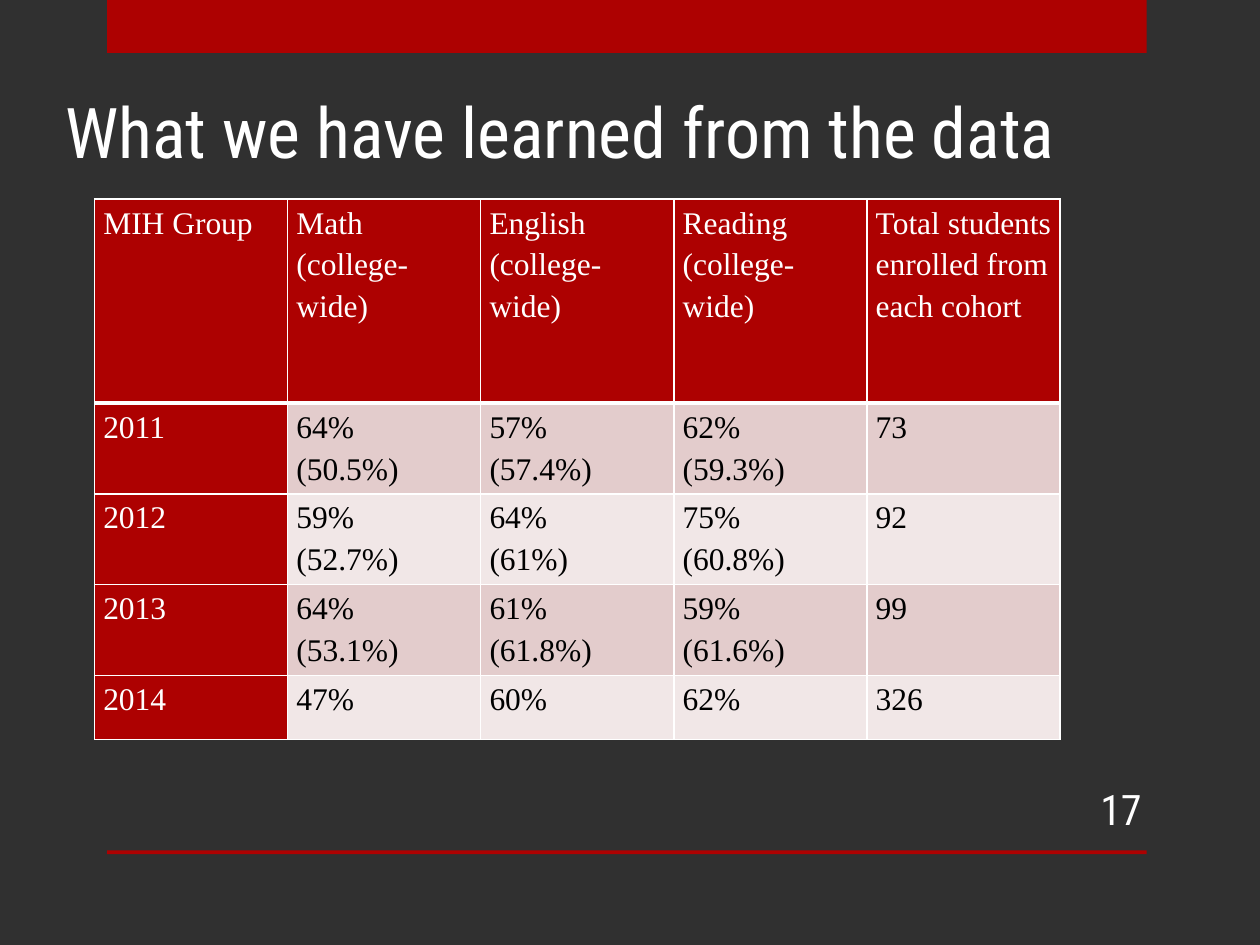
from dataclasses import dataclass

from lxml import etree
from pptx import Presentation
from pptx import util as u
from pptx.dml.color import RGBColor
from pptx.enum import shapes, text
from pptx.oxml.ns import qn


@dataclass(frozen=True)
class Theme:
    background: str = "303030"
    accent: str = "AD0101"
    light: str = "FFFFFF"
    dark: str = "000000"
    bands: tuple[str, str] = ("E3CCCC", "F1E7E7")
    heading_font: str = "Roboto Condensed"
    table_font: str = "Times New Roman"
    title_size: int = 40
    number_size: int = 24
    table_size: int = 18


@dataclass(frozen=True)
class Box:
    """A place on the slide, in inches."""
    left: float
    top: float
    width: float
    height: float

    def lengths(self) -> list[u.Length]:
        return [u.Inches(n) for n in (self.left, self.top, self.width, self.height)]


@dataclass(frozen=True)
class Label:
    words: str
    box: Box
    size: int
    anchor: text.MSO_ANCHOR
    alignment: text.PP_ALIGN


THEME = Theme()
SLIDE_WIDTH, SLIDE_HEIGHT = 10, 7.5
COLUMN_WIDTH = 1.533
HEADER_HEIGHT, ROW_HEIGHT = 1.62, 0.51
BORDER, HEADER_RULE = 1, 3

BARS = [Box(0.85, 0, 8.25, 0.42), Box(0.85, 6.75, 8.25, 0.03)]
LABELS = [
    Label("17", Box(8.33, 6.22, 0.83, 0.4), THEME.number_size,
          text.MSO_ANCHOR.MIDDLE, text.PP_ALIGN.RIGHT),
    Label("What we have learned from the data", Box(0.42, 0.5, 9.33, 0.92),
          THEME.title_size, text.MSO_ANCHOR.BOTTOM, text.PP_ALIGN.LEFT),
]
ROWS = [
    ["MIH Group", "Math (college-wide)", "English (college-wide)",
     "Reading (college-wide)", "Total students enrolled from each cohort"],
    ["2011", "64%\n(50.5%)", "57%\n(57.4%)", "62%\n(59.3%)", "73"],
    ["2012", "59%\n(52.7%)", "64%\n(61%)", "75%\n(60.8%)", "92"],
    ["2013", "64%\n(53.1%)", "61%\n(61.8%)", "59%\n(61.6%)", "99"],
    ["2014", "47%", "60%", "62%", "326"],
]


def paint(fill, colour: str) -> None:
    fill.solid()
    fill.fore_color.rgb = RGBColor.from_string(colour)


def set_font(font, name: str, size: int, colour: str) -> None:
    font.name = name
    font.size = u.Pt(size)
    font.color.rgb = RGBColor.from_string(colour)


def add_bar(slide, box: Box) -> None:
    bar = slide.shapes.add_shape(shapes.MSO_SHAPE.RECTANGLE, *box.lengths())
    bar.shadow.inherit = False
    paint(bar.fill, THEME.accent)
    bar.line.fill.background()


def add_label(slide, label: Label) -> None:
    frame = slide.shapes.add_textbox(*label.box.lengths()).text_frame
    frame.word_wrap = True
    frame.vertical_anchor = label.anchor
    paragraph = frame.paragraphs[0]
    paragraph.text = label.words
    paragraph.alignment = label.alignment
    set_font(paragraph.font, THEME.heading_font, label.size, THEME.light)


def set_borders(cell, bottom: int) -> None:
    properties = cell._tc.get_or_add_tcPr()
    edges = {"a:lnL": BORDER, "a:lnR": BORDER, "a:lnT": BORDER, "a:lnB": bottom}
    for position, (tag, width) in enumerate(edges.items()):
        line = etree.Element(qn(tag), w=str(u.Pt(width)))
        fill = etree.SubElement(line, qn("a:solidFill"))
        etree.SubElement(fill, qn("a:srgbClr"), val=THEME.light)
        properties.insert(position, line)


def fill_cell(cell, words: str, row: int, column: int) -> None:
    is_heading = row == 0 or column == 0
    cell.margin_left = cell.margin_right = u.Inches(0.07)
    cell.margin_top = cell.margin_bottom = 0
    paint(cell.fill, THEME.accent if is_heading else THEME.bands[(row - 1) % 2])
    set_borders(cell, HEADER_RULE if row == 0 else BORDER)
    cell.text = words
    for paragraph in cell.text_frame.paragraphs:
        paragraph.line_spacing = 1.2
        set_font(paragraph.font, THEME.table_font, THEME.table_size,
                 THEME.light if is_heading else THEME.dark)


def add_results(slide, rows: list[list[str]]) -> None:
    heights = [HEADER_HEIGHT] + [ROW_HEIGHT] * (len(rows) - 1)
    box = Box(0.75, 1.58, COLUMN_WIDTH * len(rows[0]), sum(heights))
    table = slide.shapes.add_table(len(rows), len(rows[0]), *box.lengths()).table
    for column in table.columns:
        column.width = u.Inches(COLUMN_WIDTH)
    for row, (height, values) in enumerate(zip(heights, rows)):
        table.rows[row].height = u.Inches(height)
        for column, words in enumerate(values):
            fill_cell(table.cell(row, column), words, row, column)


def main() -> None:
    presentation = Presentation()
    presentation.slide_width = u.Inches(SLIDE_WIDTH)
    presentation.slide_height = u.Inches(SLIDE_HEIGHT)
    slide = presentation.slides.add_slide(presentation.slide_layouts[6])
    paint(slide.background.fill, THEME.background)

    # Bars at the top and bottom
    for box in BARS:
        add_bar(slide, box)

    # Page number and title
    for label in LABELS:
        add_label(slide, label)

    # Results by cohort
    add_results(slide, ROWS)

    presentation.save("out.pptx")


if __name__ == "__main__":
    main()
